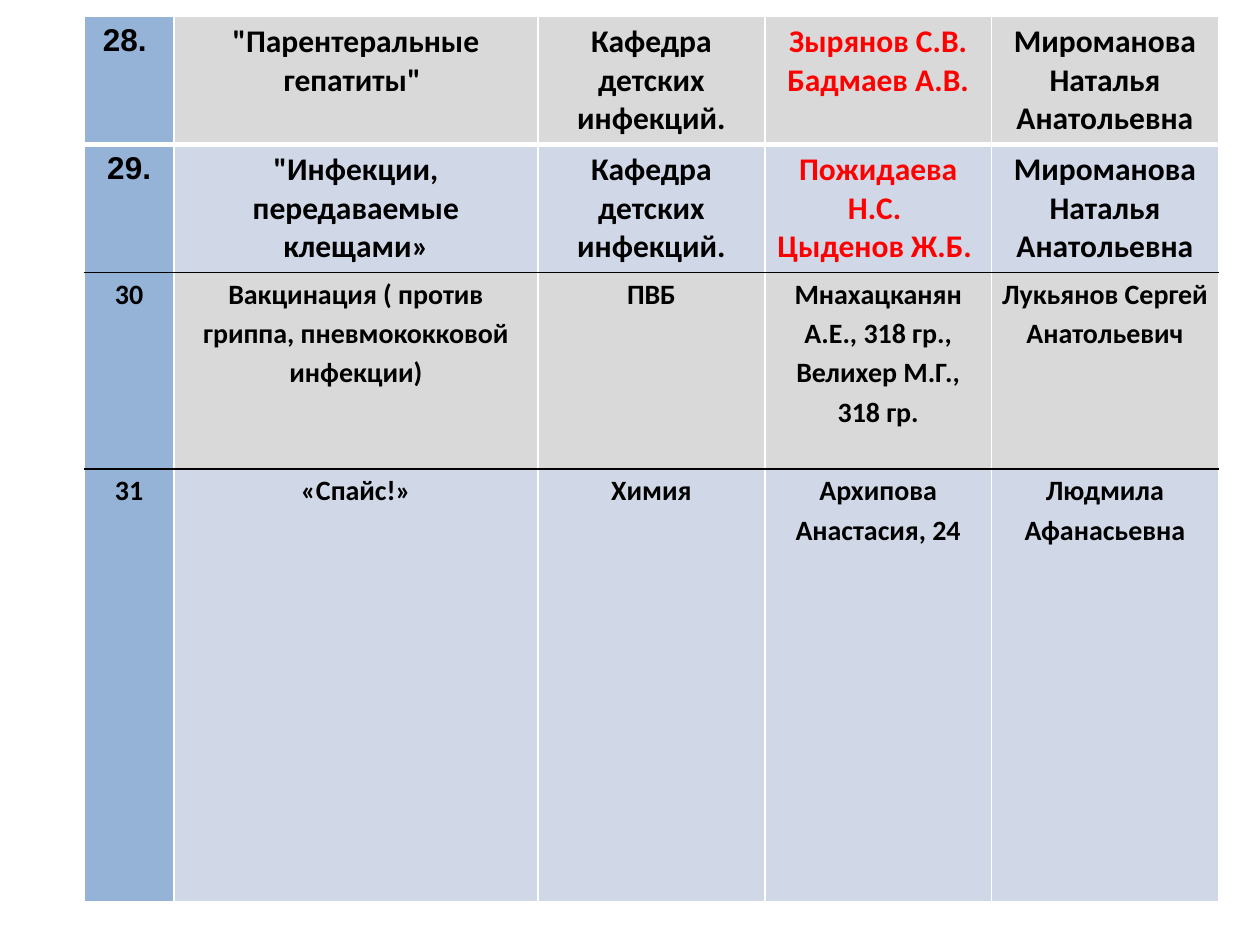
import pptx
import pptx.dml.color
import pptx.enum.text
import pptx.oxml.ns
import pptx.util
from lxml import etree

COLORS = {
    "number": "95B3D7",
    "grey": "D9D9D9",
    "blue": "D0D8E8",
    "text": "000000",
    "accent": "FF0000",
    "white": "FFFFFF",
}
WIDTH, HEIGHT = pptx.util.Inches(10), pptx.util.Inches(7.5)
LEFT, TOP = pptx.util.Inches(0.67), pptx.util.Inches(0.13)
COLUMN_SHARES = [0.071, 0.289, 0.18, 0.18, 0.18]
ROW_SHARES = [0.135, 0.135, 0.208, 0.458]

# Each cell is a list of paragraphs
TOPICS = [
    [["28. "], ['"Парентеральные гепатиты" '], ["Кафедра детских инфекций."],
     ["Зырянов С.В. Бадмаев А.В."], ["Мироманова Наталья Анатольевна"]],
    [["29."], ['"Инфекции, передаваемые клещами»'], ["Кафедра детских инфекций."],
     ["Пожидаева Н.С. ", "Цыденов Ж.Б. "], ["Мироманова Наталья Анатольевна"]],
    [["30"], ["Вакцинация ( против гриппа, пневмококковой инфекции)"], ["ПВБ"],
     ["Мнахацканян А.Е., 318 гр.,", "Велихер М.Г., 318 гр."],
     ["Лукьянов Сергей Анатольевич"]],
    [["31"], ["«Спайс!»"], ["Химия"], ["Архипова Анастасия, 24"],
     ["Людмила Афанасьевна"]],
]
# Horizontal rules from above the first row to below the last: colour, points
RULES = [("white", 1), ("white", 3), ("text", 1), ("text", 1), ("white", 1)]


def rgb(name):
    return pptx.dml.color.RGBColor.from_string(COLORS[name])


def set_borders(cell, top, bottom):
    """Draw white sides and the given (colour, points) top and bottom rules."""
    properties = cell._tc.get_or_add_tcPr()
    side = ("white", 1)
    edges = {"lnL": side, "lnR": side, "lnT": top, "lnB": bottom}
    for index, (tag, (color, points)) in enumerate(edges.items()):
        line = etree.Element(pptx.oxml.ns.qn(f"a:{tag}"), w=str(pptx.util.Pt(points)))
        fill = etree.SubElement(line, pptx.oxml.ns.qn("a:solidFill"))
        etree.SubElement(fill, pptx.oxml.ns.qn("a:srgbClr"), val=COLORS[color])
        properties.insert(index, line)


presentation = pptx.Presentation()
presentation.slide_width, presentation.slide_height = WIDTH, HEIGHT
slide = presentation.slides.add_slide(presentation.slide_layouts[6])

table = slide.shapes.add_table(
    len(ROW_SHARES), len(COLUMN_SHARES), LEFT, TOP,
    int(WIDTH * sum(COLUMN_SHARES)), int(HEIGHT * sum(ROW_SHARES)),
).table
table.first_row = False
table.horz_banding = False
for column, share in zip(table.columns, COLUMN_SHARES):
    column.width = int(WIDTH * share)
for row, share in zip(table.rows, ROW_SHARES):
    row.height = int(HEIGHT * share)

for row_index, topic in enumerate(TOPICS):
    large = row_index < 2
    band = "blue" if row_index % 2 else "grey"
    for column_index, paragraphs in enumerate(topic):
        cell = table.cell(row_index, column_index)
        cell.fill.solid()
        cell.fill.fore_color.rgb = rgb("number" if column_index == 0 else band)
        set_borders(cell, RULES[row_index], RULES[row_index + 1])
        cell.margin_left = cell.margin_right = pptx.util.Inches(0.1 if large else 0.07)
        cell.margin_top = cell.margin_bottom = pptx.util.Inches(0.05 if large else 0)
        for index, text in enumerate(paragraphs):
            frame = cell.text_frame
            paragraph = frame.add_paragraph() if index else frame.paragraphs[0]
            paragraph.alignment = pptx.enum.text.PP_ALIGN.CENTER
            if not large:
                paragraph.line_spacing = 1.15
            run = paragraph.add_run()
            run.text = text
            run.font.name = "Arial" if large and column_index == 0 else "Calibri"
            run.font.size = pptx.util.Pt(18 if large else 16)
            run.font.bold = True
            run.font.color.rgb = rgb("accent" if large and column_index == 3 else "text")

presentation.save("out.pptx")
